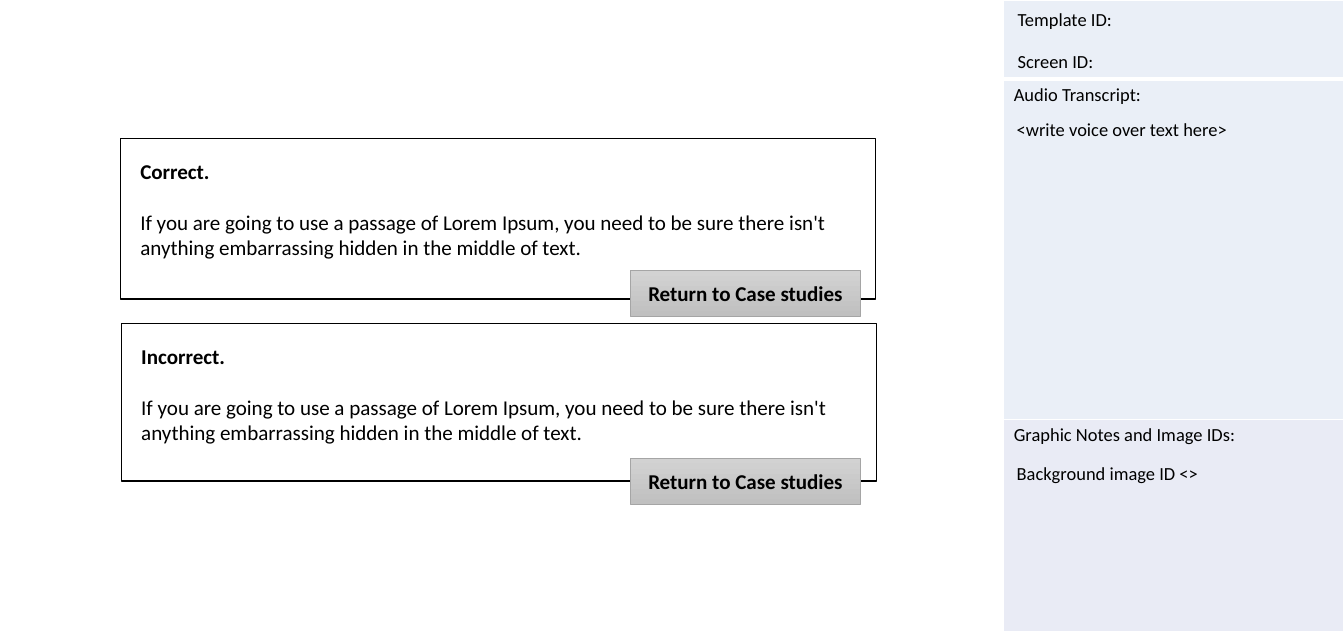
from lxml import etree
from pptx import Presentation, util as u
from pptx.dml.color import RGBColor
from pptx.enum import shapes, text
from pptx.oxml import ns

SLIDE_WIDTH, SLIDE_HEIGHT = u.Inches(14.17), u.Inches(6.69)
FEEDBACK = (
    "If you are going to use a passage of Lorem Ipsum, you need to be sure "
    "there isn't anything embarrassing hidden in the middle of text."
)


def color(value):
    return RGBColor.from_string(value)


def across(percent):
    return round(SLIDE_WIDTH * percent / 100)


def down(percent):
    return round(SLIDE_HEIGHT * percent / 100)


def place(left, top, width, height):
    return across(left), down(top), across(width), down(height)


def style(paragraph, size, bold=False):
    font = paragraph.font
    font.name, font.size, font.bold = "Calibri", u.Pt(size), bold
    font.color.rgb = color("000000")


def set_margins(frame, horizontal, vertical):
    frame.margin_left = frame.margin_right = u.Inches(horizontal)
    frame.margin_top = frame.margin_bottom = u.Inches(vertical)


def set_border(cell, side, points):
    properties = cell._tc.get_or_add_tcPr()
    line = etree.SubElement(properties, ns.qn(f"a:ln{side}"), w=str(u.Pt(points)))
    fill = etree.SubElement(line, ns.qn("a:solidFill"))
    etree.SubElement(fill, ns.qn("a:srgbClr"), val="FFFFFF")


def add_sidebar(slide, rows):
    height = sum(row[0] for row in rows)
    frame = slide.shapes.add_table(len(rows), 1, *place(74.66, 0, 25.34, height))
    table = frame.table
    table.first_row = table.horz_banding = False
    for index, (row_height, heading, fill, top_line, bottom_line) in enumerate(rows):
        table.rows[index].height = down(row_height)
        cell = table.cell(index, 0)
        for side, points in zip("LRTB", (1, 1, top_line, bottom_line)):
            set_border(cell, side, points)
        cell.fill.solid()
        cell.fill.fore_color.rgb = color(fill)
        set_margins(cell, 0.11, 0.05)
        cell.text = heading
        style(cell.text_frame.paragraphs[0], 14)


def add_label(slide, wording, left, top, width):
    frame = slide.shapes.add_textbox(*place(left, top, width, 5.08)).text_frame
    frame.word_wrap = True
    frame.auto_size = text.MSO_AUTO_SIZE.SHAPE_TO_FIT_TEXT
    frame.text = wording
    style(frame.paragraphs[0], 14)


def add_rectangle(slide, area, line_color, line_width):
    shape = slide.shapes.add_shape(shapes.MSO_SHAPE.RECTANGLE, *place(*area))
    shape.shadow.inherit = False
    shape.line.color.rgb = color(line_color)
    shape.line.width = u.Pt(line_width)
    shape.text_frame.word_wrap = True
    return shape


def add_feedback(slide, verdict, area):
    shape = add_rectangle(slide, area, "000000", 1)
    shape.fill.solid()
    shape.fill.fore_color.rgb = color("FFFFFF")
    frame = shape.text_frame
    frame.vertical_anchor = text.MSO_ANCHOR.TOP
    set_margins(frame, 0.21, 0.21)
    frame.text = f"{verdict}\n{FEEDBACK}"
    heading, body = frame.paragraphs
    for paragraph in (heading, body):
        paragraph.alignment = text.PP_ALIGN.LEFT
    style(heading, 16, bold=True)
    style(body, 16)
    heading.space_after = u.Pt(19.5)


def add_return_button(slide, top):
    shape = add_rectangle(slide, (46.93, top, 17.08, 7.17), "A5A5A5", 0.5)
    shape.fill.gradient()
    shape.fill.gradient_angle = 270
    for stop, shade in zip(shape.fill.gradient_stops, ("D2D2D2", "C0C0C0")):
        stop.color.rgb = color(shade)
    frame = shape.text_frame
    frame.vertical_anchor = text.MSO_ANCHOR.MIDDLE
    set_margins(frame, 0, 0.05)
    frame.text = "Return to Case studies"
    paragraph = frame.paragraphs[0]
    paragraph.alignment = text.PP_ALIGN.CENTER
    style(paragraph, 16, bold=True)


def main():
    presentation = Presentation()
    presentation.slide_width, presentation.slide_height = SLIDE_WIDTH, SLIDE_HEIGHT
    slide = presentation.slides.add_slide(presentation.slide_layouts[6])

    add_sidebar(slide, [
        (12.41, "", "EAEFF7", 1, 3),
        (53.66, "Audio Transcript:", "EAEFF7", 3, 1),
        (33.33, "Graphic Notes and Image IDs:", "E9EBF5", 1, 1),
    ])
    for wording, left, top, width in (
        ("Screen ID:", 75.02, 7.17, 26.96),
        ("Template ID:", 75.02, 0.6, 26.96),
        ("<write voice over text here>", 74.95, 17.79, 25.12),
        ("Background image ID <>", 74.95, 72.05, 25.12),
    ):
        add_label(slide, wording, left, top, width)

    add_feedback(slide, "Correct.", (8.96, 21.82, 56.18, 25.26))
    add_feedback(slide, "Incorrect.", (9.03, 50.97, 56.18, 24.81))
    for top in (42.6, 72.2):
        add_return_button(slide, top)

    presentation.save("out.pptx")


if __name__ == "__main__":
    main()
